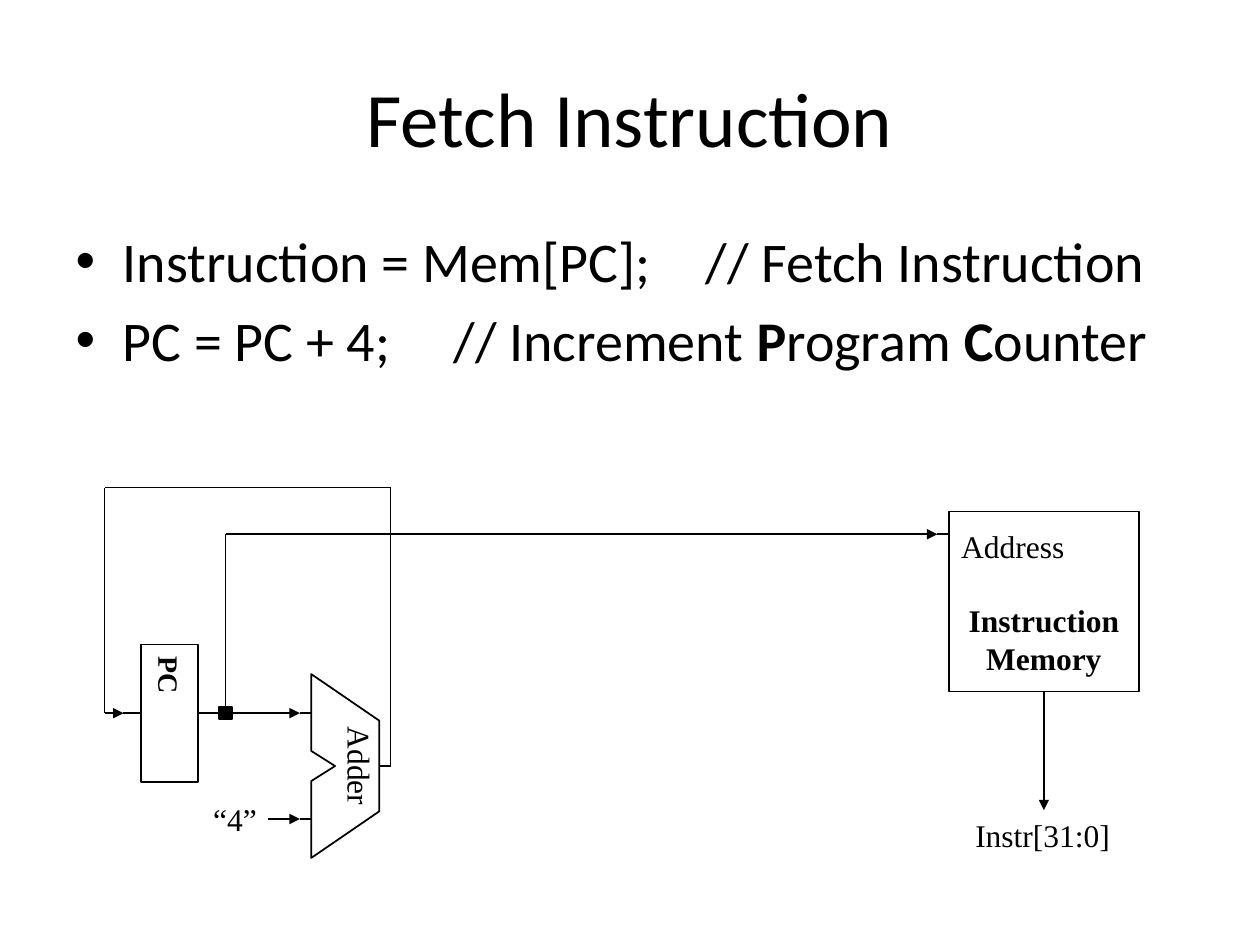
"""Build a slide on the instruction fetch step with its datapath diagram."""
from dataclasses import dataclass
from typing import NamedTuple, Optional, Union

from lxml import etree
from pptx import Presentation
from pptx.dml.color import RGBColor
from pptx.enum.shapes import MSO_CONNECTOR, MSO_SHAPE
from pptx.enum.text import MSO_ANCHOR, PP_ALIGN
from pptx.oxml.ns import qn
from pptx.util import Inches, Pt

STRAIGHT = MSO_CONNECTOR.STRAIGHT
RECTANGLE = MSO_SHAPE.RECTANGLE
LEFT, CENTER = PP_ALIGN.LEFT, PP_ALIGN.CENTER
TOP, MIDDLE = MSO_ANCHOR.TOP, MSO_ANCHOR.MIDDLE
SITE_TOP, SITE_LEFT, SITE_BOTTOM, SITE_RIGHT = range(4)

COLORS = {"ink": "000000", "paper": "FFFFFF"}
HEADING_FONT, DIAGRAM_FONT = "Calibri", "Times New Roman"
COLUMNS, ROWS = 100, 75
SLIDE_WIDTH, SLIDE_HEIGHT = Inches(10), Inches(7.5)

PC_ROW, ADDRESS_ROW, OUTPUT_ROW, CONSTANT_ROW = 56.6, 42.4, 60.8, 65
LOOP_LEFT, LOOP_RIGHT, LOOP_ROW = 8.3, 31, 38.7
ADDER_LEFT, ADDER_RIGHT, STUB = 24.7, 30.1, 0.9
ADDER_PORT = ADDER_LEFT - STUB
TAP_COLUMN = 17.9
MEMORY_CENTER, MEMORY_PORT = 82.85, 74.4


class Point(NamedTuple):
    column: float
    row: float


class Joint(NamedTuple):
    block: str
    site: int


@dataclass
class Block:
    name: str
    column: float
    row: float
    width: float
    height: float
    fill: str = "paper"


@dataclass
class Wire:
    start: Union[Point, Joint]
    end: Union[Point, Joint]
    arrow: bool = False


BLOCKS = [
    Block("pc", 11.2, 51.15, 4.5, 10.9),
    Block("memory", 75.3, 40.6, 15.1, 14.3),
    Block("tap", TAP_COLUMN - 0.5, PC_ROW - 0.5, 1, 1, "ink"),
]

ADDER_OUTLINE = [
    Point(ADDER_LEFT, 53.5), Point(ADDER_RIGHT, 57.2), Point(ADDER_RIGHT, 64.4),
    Point(ADDER_LEFT, 68.1), Point(ADDER_LEFT, 62), Point(26.6, OUTPUT_ROW),
    Point(ADDER_LEFT, 59.6),
]

WIRES = [
    Wire(Point(ADDER_RIGHT, OUTPUT_ROW), Point(LOOP_RIGHT, OUTPUT_ROW)),
    Wire(Point(LOOP_RIGHT, OUTPUT_ROW), Point(LOOP_RIGHT, LOOP_ROW)),
    Wire(Point(LOOP_RIGHT, LOOP_ROW), Point(LOOP_LEFT, LOOP_ROW)),
    Wire(Point(LOOP_LEFT, LOOP_ROW), Point(LOOP_LEFT, PC_ROW)),
    Wire(Point(LOOP_LEFT, PC_ROW), Point(9.8, PC_ROW), arrow=True),
    Wire(Point(9.8, PC_ROW), Joint("pc", SITE_LEFT)),
    Wire(Joint("pc", SITE_RIGHT), Joint("tap", SITE_LEFT)),
    Wire(Joint("tap", SITE_RIGHT), Point(ADDER_PORT, PC_ROW), arrow=True),
    Wire(Point(ADDER_PORT, PC_ROW), Point(ADDER_LEFT, PC_ROW)),
    Wire(Point(21.3, CONSTANT_ROW), Point(ADDER_PORT, CONSTANT_ROW), arrow=True),
    Wire(Point(ADDER_PORT, CONSTANT_ROW), Point(ADDER_LEFT, CONSTANT_ROW)),
    Wire(Joint("tap", SITE_TOP), Point(TAP_COLUMN, ADDRESS_ROW)),
    Wire(Point(TAP_COLUMN, ADDRESS_ROW), Point(MEMORY_PORT, ADDRESS_ROW), arrow=True),
    Wire(Point(MEMORY_PORT, ADDRESS_ROW), Point(75.3, ADDRESS_ROW)),
    Wire(Joint("memory", SITE_BOTTOM), Point(MEMORY_CENTER, 64.3), arrow=True),
]


def across(columns: float) -> int:
    """Turn grid columns into a horizontal length."""
    return round(SLIDE_WIDTH * columns / COLUMNS)


def down(rows: float) -> int:
    """Turn grid rows into a vertical length."""
    return round(SLIDE_HEIGHT * rows / ROWS)


def color(name: str) -> RGBColor:
    """Look up a named color."""
    return RGBColor.from_string(COLORS[name])


def write(paragraph, text: str, *, size: float = 18, font: str = DIAGRAM_FONT,
          bold: bool = False, align: Optional[PP_ALIGN] = CENTER, before: Optional[float] = None):
    """Append a formatted run to a paragraph."""
    run = paragraph.add_run()
    run.text = text
    run.font.size, run.font.name, run.font.bold = Pt(size), font, bold
    run.font.color.rgb = color("ink")
    if align is not None:
        paragraph.alignment = align
    if before is not None:
        paragraph.space_before = Pt(before)


def style(shape, fill: str):
    """Give a shape a plain fill and a thin outline."""
    shape.shadow.inherit = False
    shape.fill.solid()
    shape.fill.fore_color.rgb = color(fill)
    shape.line.color.rgb = color("ink")
    shape.line.width = Pt(1)


def turn_text(text_frame, direction: str):
    """Set the direction in which a shape's text runs."""
    text_frame.word_wrap = False
    text_frame._txBody.bodyPr.set("vert", direction)


def draw_block(slide, block: Block):
    """Draw a rectangular block."""
    shape = slide.shapes.add_shape(RECTANGLE, across(block.column), down(block.row),
                                   across(block.width), down(block.height))
    style(shape, block.fill)
    shape.text_frame.vertical_anchor = MIDDLE
    return shape


def draw_adder(slide):
    """Draw the notched adder with its turned label."""
    corners = [(across(point.column), down(point.row)) for point in ADDER_OUTLINE]
    builder = slide.shapes.build_freeform(*corners[0])
    builder.add_line_segments(corners[1:], close=True)
    shape = builder.convert_to_shape()
    style(shape, "paper")
    frame = shape.text_frame
    turn_text(frame, "vert")
    frame.vertical_anchor = TOP
    frame.margin_left = frame.margin_right = frame.margin_top = frame.margin_bottom = 0
    write(frame.paragraphs[0], "Adder")


def draw_wire(slide, wire: Wire, shapes: dict):
    """Draw a wire, joined to blocks where it names them."""
    ends = [end if isinstance(end, Point) else Point(0, 0) for end in (wire.start, wire.end)]
    connector = slide.shapes.add_connector(
        STRAIGHT, across(ends[0].column), down(ends[0].row),
        across(ends[1].column), down(ends[1].row))
    for end, connect in ((wire.start, connector.begin_connect), (wire.end, connector.end_connect)):
        if isinstance(end, Joint):
            connect(shapes[end.block], end.site)
    connector.line.color.rgb = color("ink")
    connector.line.width = Pt(1)
    if wire.arrow:
        etree.SubElement(connector.line._get_or_add_ln(), qn("a:tailEnd"), type="triangle")
    etree.SubElement(connector._element.spPr, qn("a:effectLst"))


def draw_label(slide, text: str, column: float, row: float, width: float):
    """Draw a one-line label."""
    box = slide.shapes.add_textbox(across(column), down(row), across(width), down(4))
    box.text_frame.word_wrap = False
    write(box.text_frame.paragraphs[0], text)


def fill_placeholders(slide):
    """Place and fill the title and the list."""
    title, body = slide.shapes.title, slide.placeholders[1]
    for placeholder, row, height in ((title, 3, 12.5), (body, 17.5, 49.5)):
        placeholder.left, placeholder.top = across(5), down(row)
        placeholder.width, placeholder.height = across(90), down(height)
    write(title.text_frame.paragraphs[0], "Fetch Instruction", size=44, font=HEADING_FONT)
    first = body.text_frame.paragraphs[0]
    write(first, "Instruction = Mem[PC];\t// Fetch Instruction", size=32, font=HEADING_FONT, align=None)
    second = body.text_frame.add_paragraph()
    for text, bold in (("PC = PC + 4;\t// Increment ", False), ("P", True),
                       ("rogram ", False), ("C", True), ("ounter", False)):
        write(second, text, size=32, font=HEADING_FONT, bold=bold, align=None)


def main():
    """Build and save the slide."""
    presentation = Presentation()
    presentation.slide_width, presentation.slide_height = SLIDE_WIDTH, SLIDE_HEIGHT
    slide = presentation.slides.add_slide(presentation.slide_layouts[1])
    fill_placeholders(slide)
    draw_adder(slide)
    shapes = {block.name: draw_block(slide, block) for block in BLOCKS}
    turn_text(shapes["pc"].text_frame, "eaVert")
    write(shapes["pc"].text_frame.paragraphs[0], "PC", size=16, bold=True)
    memory = shapes["memory"].text_frame
    memory.word_wrap = True
    write(memory.paragraphs[0], "Address", align=LEFT)
    write(memory.add_paragraph(), "Instruction", bold=True, before=21)
    write(memory.add_paragraph(), "Memory", bold=True)
    for wire in WIRES:
        draw_wire(slide, wire, shapes)
    draw_label(slide, "Instr[31:0]", 76.4, 64.3, 12.7)
    draw_label(slide, "“4”", 15.9, 63, 5.5)
    presentation.save("out.pptx")


if __name__ == "__main__":
    main()
